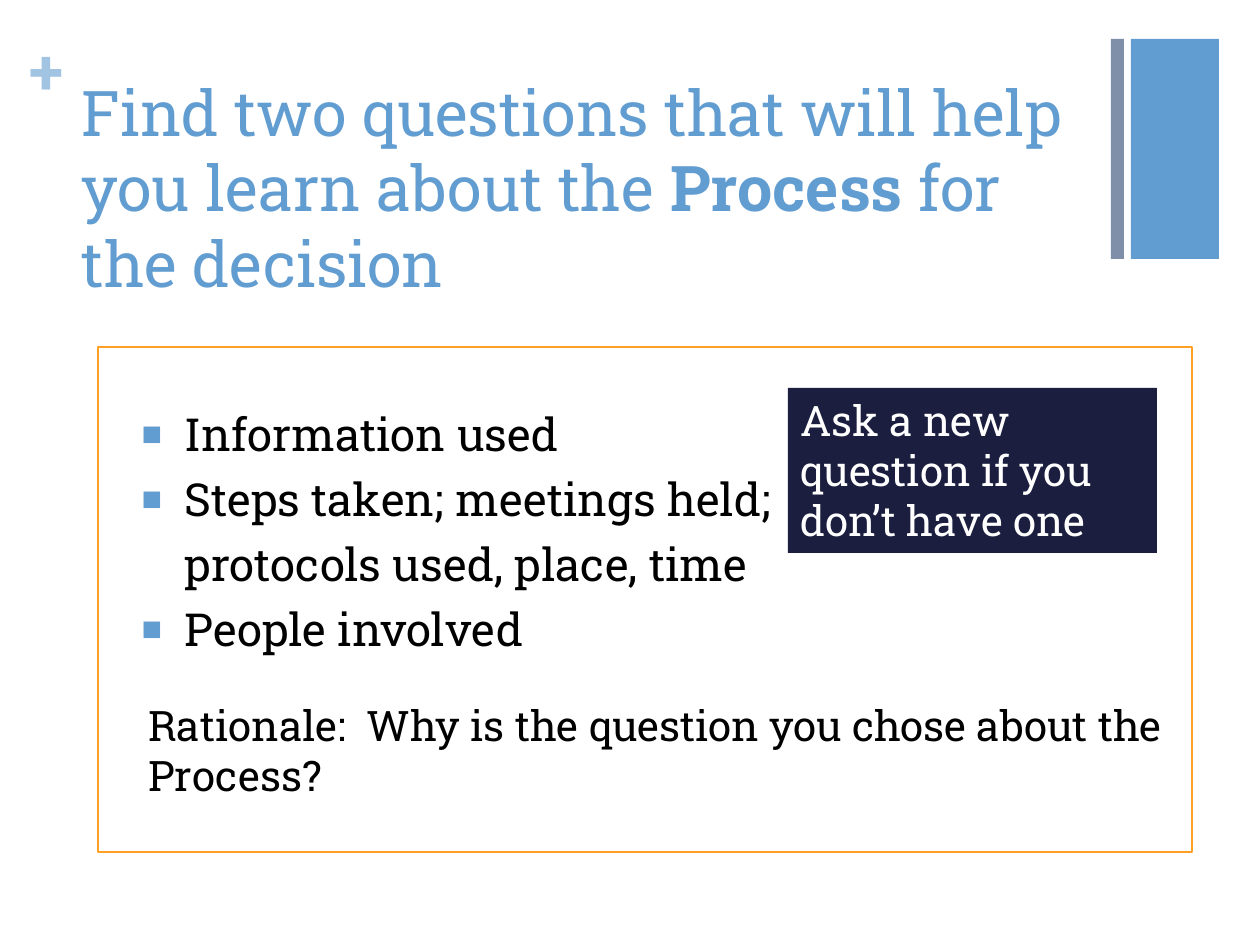
from lxml.etree import SubElement
from pptx import Presentation
from pptx.dml.color import RGBColor
from pptx.enum.shapes import MSO_SHAPE as Preset
from pptx.enum.text import MSO_ANCHOR as Anchor, MSO_AUTO_SIZE as AutoSize, PP_ALIGN as Align
from pptx.oxml.ns import qn
from pptx.util import Emu, Pt

FONT = "Roboto Slab"
BLUE = RGBColor(0x62, 0x9D, 0xD1)
PALE_BLUE = RGBColor(0xA1, 0xC4, 0xE3)
GREY_BLUE = RGBColor(0x7F, 0x8F, 0xA9)
NAVY = RGBColor(0x1B, 0x1E, 0x3E)
ORANGE = RGBColor(0xFD, 0xA0, 0x23)
BLACK = RGBColor(0, 0, 0)
WHITE = RGBColor(0xFF, 0xFF, 0xFF)

BULLET_LEFT, TEXT_LEFT = 31, 74
# Text and whether the line carries a bullet
LIST_LINES = [
    ("Information used", True),
    ("Steps taken; meetings held;", True),
    ("protocols used, place, time", False),
    ("People involved", True),
]


def px(length):
    return Emu(round(length * 914400 / 126))


def place(shape, box):
    shape.left, shape.top, shape.width, shape.height = map(px, box)


def format_text(shape, size, color, bold=False):
    """Set the frame to wrapped, top-left text and format every run."""
    frame = shape.text_frame
    frame.word_wrap = True
    frame.auto_size = AutoSize.NONE
    frame.vertical_anchor = Anchor.TOP
    for paragraph in frame.paragraphs:
        paragraph.alignment = Align.LEFT
        for run in paragraph.runs:
            run.font.name = FONT
            run.font.size = Pt(size)
            run.font.bold = bold
            run.font.color.rgb = color


def add_block(slide, box, color):
    shape = slide.shapes.add_shape(Preset.RECTANGLE, *map(px, box))
    shape.shadow.inherit = False
    shape.fill.solid()
    shape.fill.fore_color.rgb = color
    shape.line.fill.background()
    return shape


def add_label(slide, box, text, size, color, bold=False):
    label = slide.shapes.add_textbox(*map(px, box))
    label.text_frame.text = text
    format_text(label, size, color, bold)
    return label


def set_bullet(paragraph, shown):
    properties = paragraph._p.get_or_add_pPr()
    hanging = TEXT_LEFT - BULLET_LEFT if shown else 0
    properties.set("marL", str(px(TEXT_LEFT)))
    properties.set("indent", str(-px(hanging)))
    if not shown:
        SubElement(properties, qn("a:buNone"))
        return
    color = SubElement(properties, qn("a:buClr"))
    SubElement(color, qn("a:srgbClr"), val=str(BLUE))
    SubElement(properties, qn("a:buSzPct"), val="75000")
    SubElement(properties, qn("a:buChar"), char="■")


def fill_title(title):
    place(title, (69, 67, 1041, 154))
    paragraph = title.text_frame.paragraphs[0]
    parts = ("Find two questions that will help you learn about the ",
             "Process ", "for the decision")
    for part in parts:
        paragraph.add_run().text = part
    format_text(title, 36, BLUE)
    paragraph.runs[1].font.bold = True


def fill_list(body):
    place(body, (98, 347, 1094, 505))
    body.line.color.rgb = ORANGE
    body.line.width = Pt(0.75)
    frame = body.text_frame
    frame.text = "\n".join(text for text, _ in LIST_LINES)
    format_text(body, 26, BLACK)
    frame.margin_top = px(59)
    for index, (paragraph, (_, bulleted)) in enumerate(zip(frame.paragraphs, LIST_LINES)):
        paragraph.level = 1
        paragraph.space_before = Pt(6 if index else 0)
        set_bullet(paragraph, bulleted)


def main():
    presentation = Presentation()
    presentation.slide_width, presentation.slide_height = px(1260), px(945)
    slide = presentation.slides.add_slide(presentation.slide_layouts[1])

    fill_title(slide.shapes.title)
    fill_list(slide.placeholders[1])

    add_block(slide, (1131, 39, 88, 220), BLUE)
    add_block(slide, (1111, 39, 13, 220), GREY_BLUE)
    plus = add_label(slide, (30, 32, 37, 77), "+", 36, PALE_BLUE, bold=True)
    frame = plus.text_frame
    frame.margin_left = frame.margin_top = frame.margin_right = frame.margin_bottom = 0

    callout = add_block(slide, (788, 388, 369, 165), NAVY)
    callout.text_frame.text = "Ask a new question if you don’t have one"
    format_text(callout, 24, WHITE)
    add_label(slide, (136, 693, 1071, 115),
              "Rationale:  Why is the question you chose about the Process?", 24, BLACK)

    presentation.save("out.pptx")


if __name__ == "__main__":
    main()
